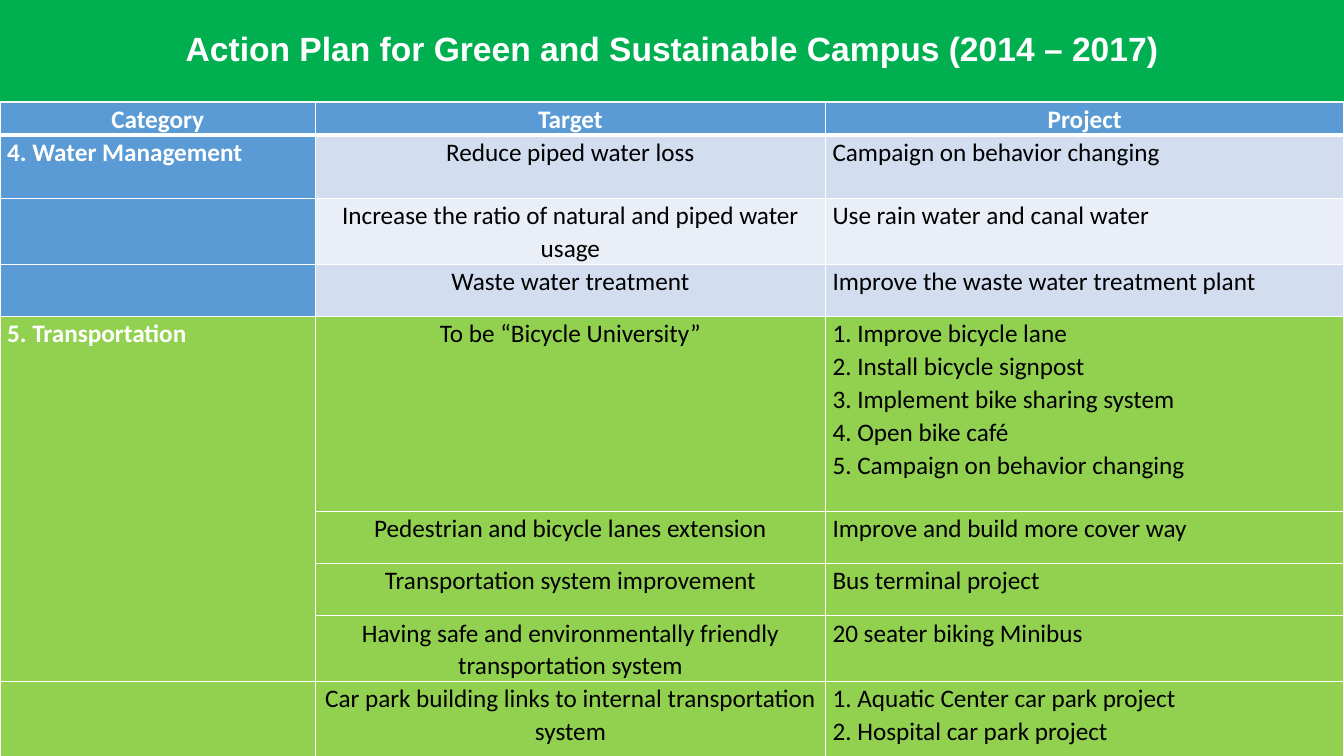
"""Builds the campus action plan slide: a title band above a table of categories, targets and projects."""
from dataclasses import dataclass

import pptx
import pptx.dml.color
import pptx.enum.text
import pptx.oxml
import pptx.oxml.ns
import pptx.util
from pptx.util import Cm

ALIGN = pptx.enum.text.PP_ALIGN
ANCHOR = pptx.enum.text.MSO_ANCHOR


@dataclass(frozen=True)
class Theme:
    """Colours, fonts and type sizes of the slide."""
    band: str = "00B050"
    header: str = "5B9BD5"
    water: str = "D2DEEF"
    water_alt: str = "EAEFF7"
    transport: str = "92D050"
    light: str = "FFFFFF"
    dark: str = "000000"
    title_font: str = "Arial"
    body_font: str = "Calibri"
    title_size: int = 24
    body_size: int = 18
    thin: int = 1
    thick: int = 3


class PlanSlide:
    """Holds the theme and the current slide."""

    def __init__(self, deck, theme):
        """Add a title-only slide to the deck."""
        self.theme = theme
        self.width = deck.slide_width
        self.slide = deck.slides.add_slide(deck.slide_layouts[5])

    def fill(self, target, colour):
        """Give a shape or cell a solid fill."""
        target.fill.solid()
        target.fill.fore_color.rgb = pptx.dml.color.RGBColor.from_string(colour)

    def add_lines(self, frame, lines, font, size, colour, bold, align, spacing):
        """Set each line as a paragraph with one run."""
        for index, line in enumerate(lines):
            paragraph = frame.add_paragraph() if index else frame.paragraphs[0]
            paragraph.alignment = align
            paragraph.line_spacing = spacing
            run = paragraph.add_run()
            run.text = line
            run.font.name = font
            run.font.size = pptx.util.Pt(size)
            run.font.bold = bold
            run.font.color.rgb = pptx.dml.color.RGBColor.from_string(colour)

    def title(self, text, height):
        """Turn the title placeholder into a full-width band."""
        band = self.slide.shapes.title
        band.left, band.top, band.width, band.height = 0, 0, self.width, height
        self.fill(band, self.theme.band)
        frame = band.text_frame
        frame.word_wrap = True
        frame.auto_size = pptx.enum.text.MSO_AUTO_SIZE.NONE
        frame.vertical_anchor = ANCHOR.MIDDLE
        self.add_lines(frame, [text], self.theme.title_font, self.theme.title_size,
                       self.theme.light, True, ALIGN.CENTER, 0.9)

    def borders(self, cell, top, bottom):
        """Draw the four borders of a cell."""
        sides = {"L": self.theme.thin, "R": self.theme.thin, "T": top, "B": bottom}
        properties = cell._tc.get_or_add_tcPr()
        for index, (side, points) in enumerate(sides.items()):
            properties.insert(index, pptx.oxml.parse_xml(
                f'<a:ln{side} {pptx.oxml.ns.nsdecls("a")} w="{pptx.util.Pt(points)}">'
                f'<a:solidFill><a:srgbClr val="{self.theme.light}"/></a:solidFill></a:ln{side}>'))

    def cell(self, cell, lines, colour, is_label, align):
        """Fill a table cell and set its lines."""
        cell.margin_left = cell.margin_right = Cm(0.18)
        cell.margin_top = cell.margin_bottom = 0
        cell.vertical_anchor = ANCHOR.TOP
        self.fill(cell, colour)
        self.add_lines(cell.text_frame, lines, self.theme.body_font, self.theme.body_size,
                       self.theme.light if is_label else self.theme.dark, is_label, align, 1.07)

    def table(self, top, columns, heights, headings, plan):
        """Add the plan table with its heading row."""
        theme = self.theme
        grid = self.slide.shapes.add_table(len(heights), len(columns), 0, top,
                                           self.width, sum(heights)).table
        grid.first_row = grid.horz_banding = False
        for column, width in zip(grid.columns, columns):
            column.width = width
        for row, height in zip(grid.rows, heights):
            row.height = height
        header = (theme.header, theme.header, *([heading] for heading in headings))
        for r, (label_fill, body_fill, *texts) in enumerate([header, *plan]):
            for c, lines in enumerate(texts):
                centred = r == 0 or c == 1
                cell = grid.cell(r, c)
                self.cell(cell, lines, body_fill if c else label_fill, r == 0 or c == 0,
                          ALIGN.CENTER if centred else ALIGN.LEFT)
                self.borders(cell, theme.thick if r == 1 else theme.thin,
                             theme.thick if r == 0 else theme.thin)
        return grid


def main():
    """Build and save the slide."""
    deck = pptx.Presentation()
    deck.slide_width, deck.slide_height = Cm(33.87), Cm(19.05)
    theme = Theme()
    page = PlanSlide(deck, theme)
    band_height = Cm(2.57)
    page.title("Action Plan for Green and Sustainable Campus (2014 – 2017)", band_height)

    water = (theme.header, theme.water)
    water_alt = (theme.header, theme.water_alt)
    transport = (theme.transport, theme.transport)
    plan = [
        (*water, ["4. Water Management"], ["Reduce piped water loss"],
         ["Campaign on behavior changing"]),
        (*water_alt, [], ["Increase the ratio of natural and piped water usage"],
         ["Use rain water and canal water"]),
        (*water, [], ["Waste water treatment"], ["Improve the waste water treatment plant"]),
        (*transport, ["5. Transportation"], ["To be “Bicycle University”"],
         ["1. Improve bicycle lane", "2. Install bicycle signpost",
          "3. Implement bike sharing system", "4. Open bike café",
          "5. Campaign on behavior changing"]),
        (*transport, [], ["Pedestrian and bicycle lanes extension"],
         ["Improve and build more cover way"]),
        (*transport, [], ["Transportation system improvement"], ["Bus terminal project"]),
        (*transport, [], ["Having safe and environmentally friendly transportation system"],
         ["20 seater biking Minibus"]),
        (*transport, [], ["Car park building links to internal transportation system"],
         ["1. Aquatic Center car park project", "2. Hospital car park project"]),
    ]
    columns = [Cm(width) for width in (7.95, 12.85, 13.07)]
    heights = [Cm(height) for height in (0.79, 1.6, 1.6, 1.32, 4.9, 1.32, 1.32, 1.6, 2.01)]
    grid = page.table(band_height, columns, heights, ("Category", "Target", "Project"), plan)
    grid.cell(4, 0).merge(grid.cell(7, 0))
    deck.save("out.pptx")


if __name__ == "__main__":
    main()
